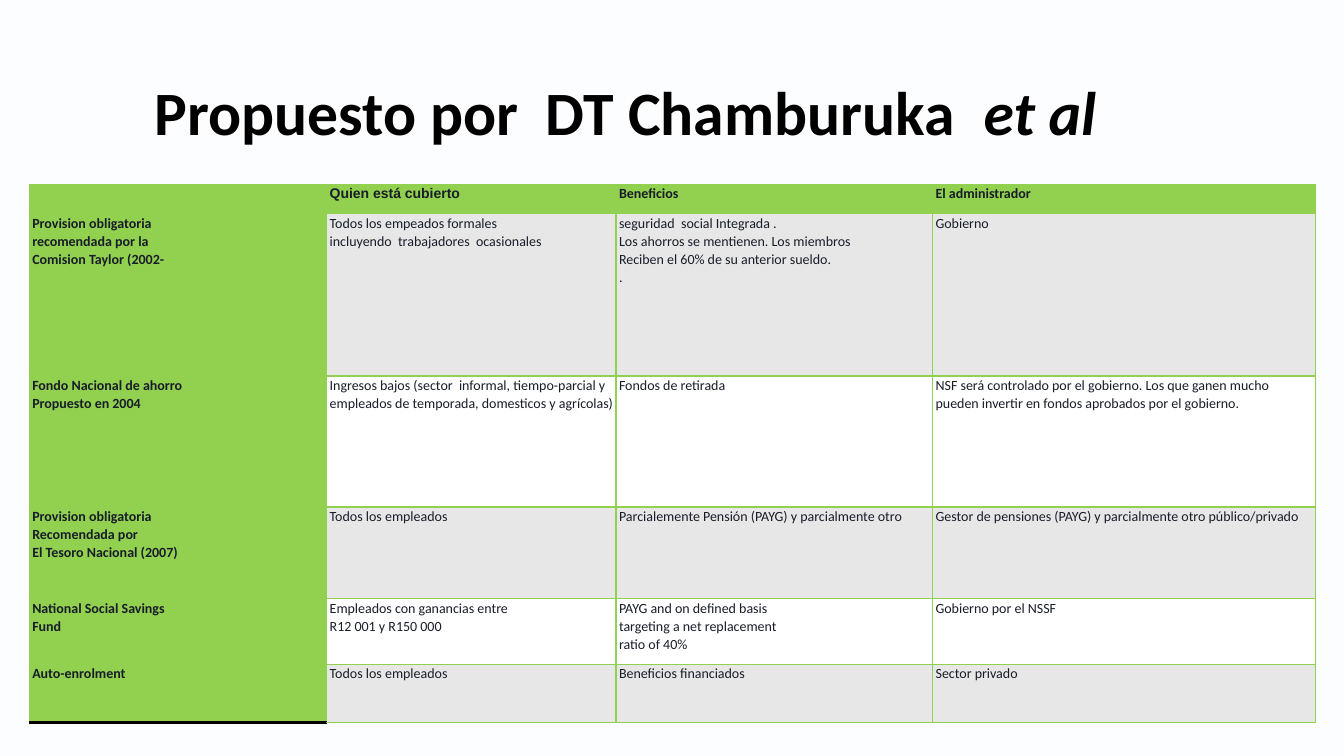
from lxml.etree import SubElement
from pptx import Presentation
from pptx.dml.color import RGBColor
from pptx.enum.text import MSO_ANCHOR, PP_ALIGN
from pptx.oxml.ns import qn
from pptx.util import Inches, Pt

BACKGROUND = RGBColor(0xFC, 0xFD, 0xFF)
GREEN = RGBColor(0x92, 0xD0, 0x50)
GREY = RGBColor(0xE7, 0xE7, 0xE7)
WHITE = RGBColor(0xFF, 0xFF, 0xFF)
BLACK = RGBColor(0x00, 0x00, 0x00)
INK = RGBColor(0x18, 0x1D, 0x29)

COLUMN_WIDTHS = [2.95, 2.87, 3.14, 3.8]
ROW_HEIGHTS = [0.29, 1.61, 1.3, 0.91, 0.65, 0.58]

# Each line of a cell is a paragraph of its own
ROWS = [
    ["", "Quien está cubierto", "Beneficios", "El administrador"],
    ["Provision obligatoria\nrecomendada por la\nComision Taylor (2002-",
     "Todos los empeados formales\nincluyendo  trabajadores  ocasionales",
     "seguridad  social Integrada .\nLos ahorros se mentienen. Los miembros\n"
     "Reciben el 60% de su anterior sueldo.\n.",
     "Gobierno"],
    ["Fondo Nacional de ahorro\nPropuesto en 2004",
     "Ingresos bajos (sector  informal, tiempo-parcial y\n"
     "empleados de temporada, domesticos y agrícolas)",
     "Fondos de retirada",
     "NSF será controlado por el gobierno. Los que ganen mucho "
     "pueden invertir en fondos aprobados por el gobierno."],
    ["Provision obligatoria\nRecomendada por\nEl Tesoro Nacional (2007)",
     "Todos los empleados",
     "Parcialemente Pensión (PAYG) y parcialmente otro",
     "Gestor de pensiones (PAYG) y parcialmente otro público/privado"],
    ["National Social Savings\nFund",
     "Empleados con ganancias entre\nR12 001 y R150 000",
     "PAYG and on defined basis\ntargeting a net replacement\nratio of 40%",
     "Gobierno por el NSSF"],
    ["Auto-enrolment", "Todos los empleados", "Beneficios financiados",
     "Sector privado"],
]


def set_font(font, size, color, bold, name="Calibri"):
    font.name, font.size, font.bold = name, Pt(size), bold
    font.color.rgb = color


def set_border(cell, side, color, width):
    """Draw one side of a cell: L, R, T or B."""
    properties = cell._tc.get_or_add_tcPr()
    line = SubElement(properties, qn(f"a:ln{side}"), w=str(Pt(width)))
    fill = SubElement(line, qn("a:solidFill"))
    SubElement(fill, qn("a:srgbClr"), val=str(color))


def add_title(page):
    title = page.shapes.title
    title.left, title.top = Inches(1.4), Inches(0.65)
    title.width, title.height = Inches(10.54), Inches(0.99)
    frame = title.text_frame
    frame.word_wrap = True
    frame.vertical_anchor = MSO_ANCHOR.MIDDLE
    frame.margin_left = frame.margin_right = Inches(0.13)
    frame.margin_top = frame.margin_bottom = Inches(0.07)
    para = frame.paragraphs[0]
    para.alignment, para.line_spacing = PP_ALIGN.LEFT, 0.9
    for text, italic in [("Propuesto por  DT Chamburuka  ", False), ("et al", True)]:
        span = para.add_run()
        span.text = text
        set_font(span.font, 44, BLACK, True)
        span.font.italic = italic


def fill_cell(cell, text, row, column):
    heading = row == 0 or column == 0
    cell.margin_left = cell.margin_right = Inches(0.03)
    cell.margin_top = cell.margin_bottom = 0
    cell.text = text
    for para in cell.text_frame.paragraphs:
        para.line_spacing = 1.07
        set_font(para.font, 10, INK, heading,
                 "Arial" if (row, column) == (0, 1) else "Calibri")

    # Borders come before the fill in the cell's properties
    black_foot = column == 0 and row == len(ROWS) - 1
    for side in "LRT":
        set_border(cell, side, GREEN, 1)
    set_border(cell, "B", *((BLACK, 2) if black_foot else (GREEN, 1)))
    cell.fill.solid()
    cell.fill.fore_color.rgb = GREEN if heading else GREY if row % 2 else WHITE


def add_pension_table(page):
    frame = page.shapes.add_table(
        len(ROWS), len(COLUMN_WIDTHS), Inches(0.29), Inches(1.83),
        Inches(sum(COLUMN_WIDTHS)), Inches(sum(ROW_HEIGHTS)))
    table = frame.table
    table.first_row = table.horz_banding = False
    for column, width in zip(table.columns, COLUMN_WIDTHS):
        column.width = Inches(width)
    for row, height in zip(table.rows, ROW_HEIGHTS):
        row.height = Inches(height)
    for row, texts in enumerate(ROWS):
        for column, text in enumerate(texts):
            fill_cell(table.cell(row, column), text, row, column)


def main():
    deck = Presentation()
    deck.slide_width, deck.slide_height = Inches(13.33), Inches(7.5)
    page = deck.slides.add_slide(deck.slide_layouts[5])
    page.background.fill.solid()
    page.background.fill.fore_color.rgb = BACKGROUND
    add_title(page)
    add_pension_table(page)
    deck.save("out.pptx")


if __name__ == "__main__":
    main()
